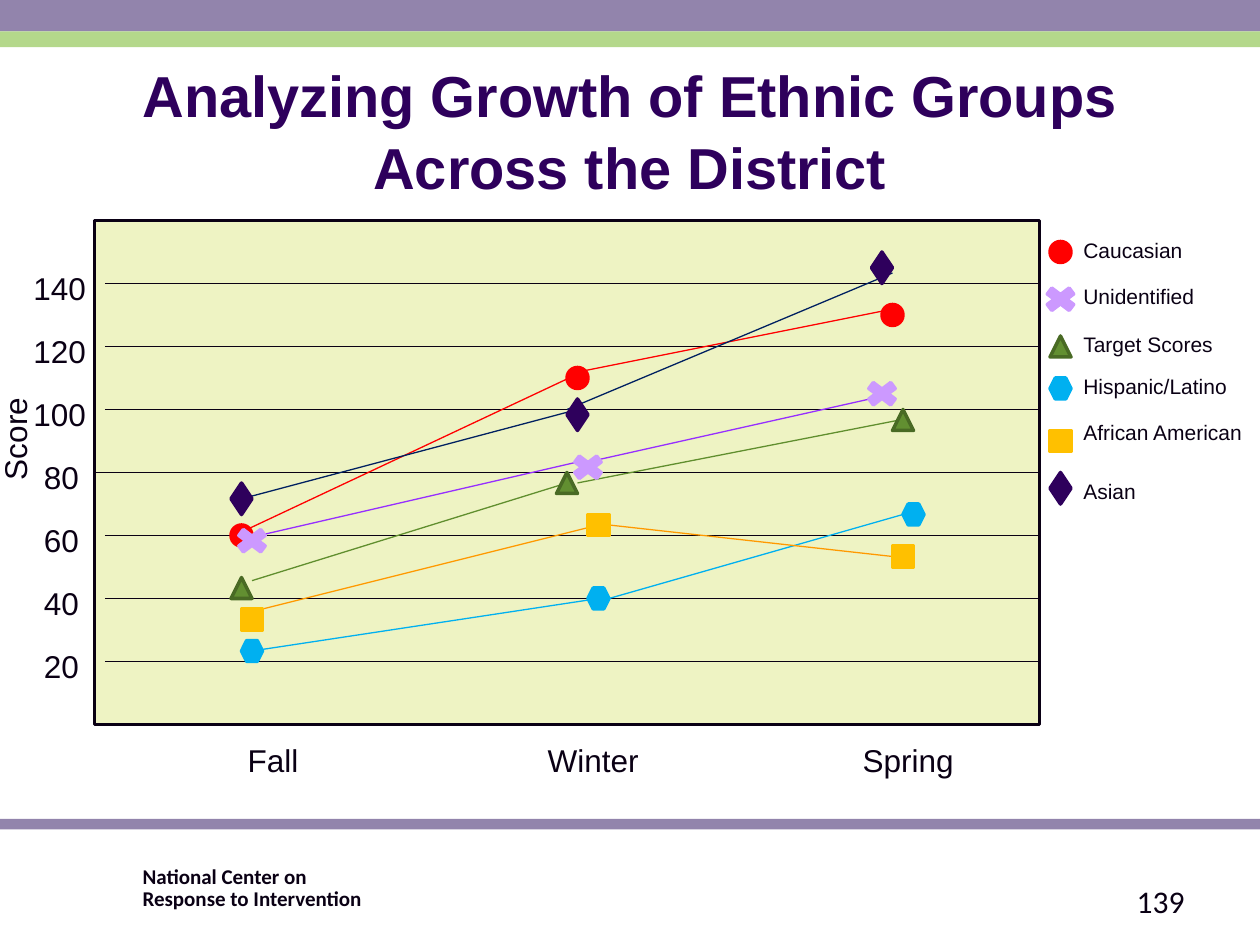
from dataclasses import dataclass
from typing import NamedTuple

from lxml import etree
from pptx import Presentation
from pptx import util as u
from pptx.dml.color import RGBColor
from pptx.enum import shapes, text
from pptx.oxml import ns

COLUMNS = 120
Mark = shapes.MSO_SHAPE
Align = text.PP_ALIGN
Anchor = text.MSO_ANCHOR


@dataclass(frozen=True)
class Theme:
    ink: str = "0A0014"
    title: str = "2E005C"
    band: str = "9284AC"
    stripe: str = "B4D88B"
    plot: str = "EEF3C3"
    font: str = "Arial"
    footer_font: str = "Calibri"
    title_size: float = 33
    label_size: float = 18
    small_size: float = 12
    heavy: float = 2
    thin: float = 0.75


class Box(NamedTuple):
    left: float
    top: float
    width: float
    height: float


class Segment(NamedTuple):
    x1: float
    y1: float
    x2: float
    y2: float


@dataclass(frozen=True)
class Group:
    name: str
    symbol: Mark
    fill: str
    edge: str
    trend: str
    size: tuple[float, float]
    points: tuple[tuple[float, float], ...]
    segments: tuple[Segment, Segment]
    key: tuple[float, float]
    name_top: float


THEME = Theme()
GROUPS = (
    Group("Caucasian", Mark.OVAL, "FF0000", "FF0000", "FF0000", (2, 2),
          ((22, 50), (54, 35), (84, 29)),
          (Segment(23.8, 50.3, 54.2, 36), Segment(55.7, 35.3, 85.7, 29.3)),
          (100, 23), 22),
    Group("Unidentified", Mark.MATH_MULTIPLY, "CC99FF", "CC99FF", "962EFF", (4, 3),
          ((22, 50), (54, 43), (82, 36)),
          (Segment(23.8, 51.2, 55, 44), Segment(56, 44, 84.2, 37.7)),
          (99, 27), 26.4),
    Group("Target Scores", Mark.ISOSCELES_TRIANGLE, "628F31", "496A24", "608E2E", (2, 2),
          ((22, 55), (53, 45), (85, 39)),
          (Segment(24, 55.3, 54, 46), Segment(55, 46, 85.7, 40)),
          (100, 32), 31),
    Group("Hispanic/Latino", Mark.HEXAGON, "00B0F0", "00B0F0", "00B0F0", (2, 2),
          ((23, 61), (56, 56), (86, 48)),
          (Segment(24, 62, 57, 57), Segment(58, 57, 86, 49)),
          (100, 36), 35),
    Group("African American", Mark.RECTANGLE, "FFC000", "FFC000", "FF9900", (2, 2),
          ((23, 58), (56, 49), (85, 52)),
          (Segment(23.8, 58.3, 57, 50), Segment(58, 50, 85, 53)),
          (100, 41), 39.4),
    Group("Asian", Mark.DIAMOND, "2E005C", "2E005C", "002060", (2, 3),
          ((22, 46), (54, 38), (83, 24)),
          (Segment(23.8, 47.3, 55, 39), Segment(54, 39, 85, 26)),
          (100, 45), 45),
)

deck = Presentation()
deck.slide_width, deck.slide_height = u.Inches(10), u.Inches(7.5)
slide = deck.slides.add_slide(deck.slide_layouts[5])


def grid(*cells: float) -> list[int]:
    return [round(cell * deck.slide_width / COLUMNS) for cell in cells]


def color(value: str) -> RGBColor:
    return RGBColor.from_string(value)


def draw_shape(kind: Mark, box: Box, fill: str, edge: str | None = None) -> None:
    figure = slide.shapes.add_shape(kind, *grid(*box))
    figure.shadow.inherit = False
    figure.fill.solid()
    figure.fill.fore_color.rgb = color(fill)
    if edge is None:
        figure.line.fill.background()
    else:
        figure.line.color.rgb = color(edge)
        figure.line.width = u.Pt(THEME.heavy)


def draw_line(segment: Segment, stroke: str) -> None:
    line = slide.shapes.add_connector(shapes.MSO_CONNECTOR.STRAIGHT, *grid(*segment))
    line.line.color.rgb = color(stroke)
    line.line.width = u.Pt(THEME.thin)
    etree.SubElement(line._element.spPr, ns.qn("a:effectLst"))


def write(holder, lines: tuple[str, ...], size: float, align: Align = Align.LEFT,
          font: str = THEME.font, ink: str = THEME.ink, bold: bool = False,
          spacing: float = 1.0, anchor: Anchor = Anchor.TOP) -> None:
    frame = holder.text_frame
    frame.word_wrap = True
    frame.auto_size = text.MSO_AUTO_SIZE.NONE
    frame.vertical_anchor = anchor
    paragraph = frame.paragraphs[0]
    paragraph.alignment = align
    paragraph.line_spacing = spacing
    for index, line in enumerate(lines):
        if index:
            paragraph.add_line_break()
        run = paragraph.add_run()
        run.text = line
        run.font.size = u.Pt(size)
        run.font.name = font
        run.font.bold = bold
        run.font.color.rgb = color(ink)


def add_label(box: Box, *lines: str, size: float = THEME.label_size, **style):
    label = slide.shapes.add_textbox(*grid(*box))
    write(label, lines, size, **style)
    return label


def draw_frame() -> None:
    for top, height, fill in ((78, 1, THEME.band), (0, 3, THEME.band),
                              (3, 1.5, THEME.stripe)):
        draw_shape(Mark.RECTANGLE, Box(0, top, COLUMNS, height), fill)
    title = slide.shapes.title
    title.left, title.top, title.width, title.height = grid(6, 6, 108, 12.6)
    write(title, ("Analyzing Growth of Ethnic Groups Across the District",),
          THEME.title_size, Align.CENTER, ink=THEME.title, bold=True,
          spacing=1.04, anchor=Anchor.MIDDLE)
    footer = add_label(Box(13.1, 82, 38.9, 3.6), "National Center on",
                       "Response to Intervention", size=THEME.small_size,
                       font=THEME.footer_font, bold=True, spacing=0.9)
    frame = footer.text_frame
    frame.margin_left = frame.margin_right = u.Inches(0.04)
    frame.margin_top = frame.margin_bottom = u.Inches(0.04)
    add_label(Box(86, 83.4, 28, 4.8), "139", align=Align.RIGHT,
              font=THEME.footer_font, anchor=Anchor.MIDDLE)


def draw_axes() -> None:
    draw_shape(Mark.RECTANGLE, Box(9, 21, 90, 48), THEME.plot, THEME.ink)
    for row, score in enumerate(range(140, 0, -20)):
        start = 9 if score == 80 else 10
        draw_line(Segment(start, 27 + 6 * row, 99, 27 + 6 * row), THEME.ink)
        left, width = (2, 8) if score >= 100 else (3, 6)
        add_label(Box(left, 25 + 6 * row, width, 4.8), str(score))
    for season, left, width in (("Fall", 18, 16), ("Winter", 48, 17), ("Spring", 78, 17)):
        add_label(Box(left, 70, width, 4.8), season, align=Align.CENTER)
    add_label(Box(-7.1, 36, 17, 4.8), "Score").rotation = 270


def draw_groups() -> None:
    for group in GROUPS:
        for segment in group.segments:
            draw_line(segment, group.trend)
    for group in GROUPS:
        for place in (*group.points, group.key):
            draw_shape(group.symbol, Box(*place, *group.size), group.fill, group.edge)
        add_label(Box(102, group.name_top, 18, 3.6), group.name, size=THEME.small_size)


def main() -> None:
    draw_frame()
    draw_axes()
    draw_groups()
    deck.save("out.pptx")


if __name__ == "__main__":
    main()
